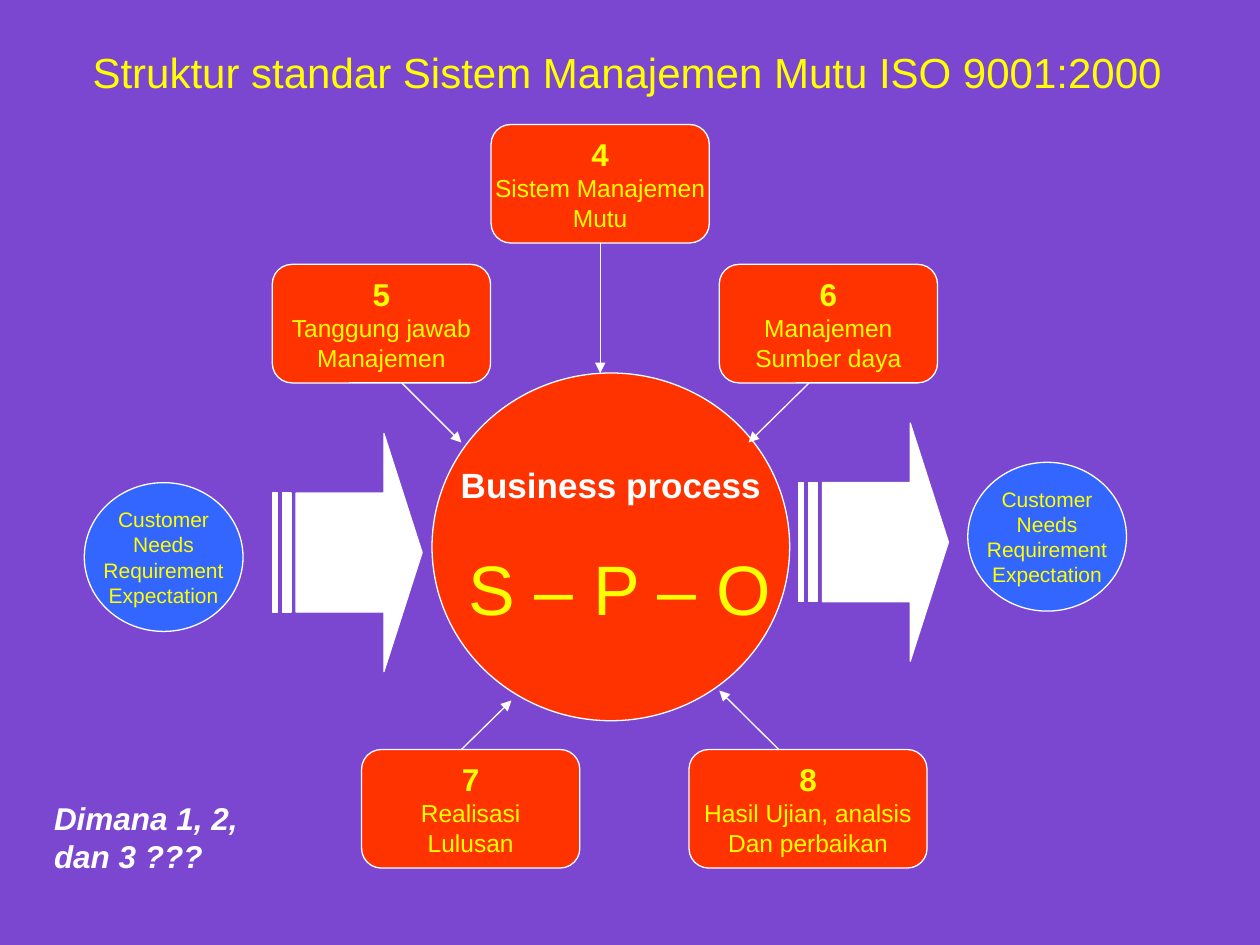
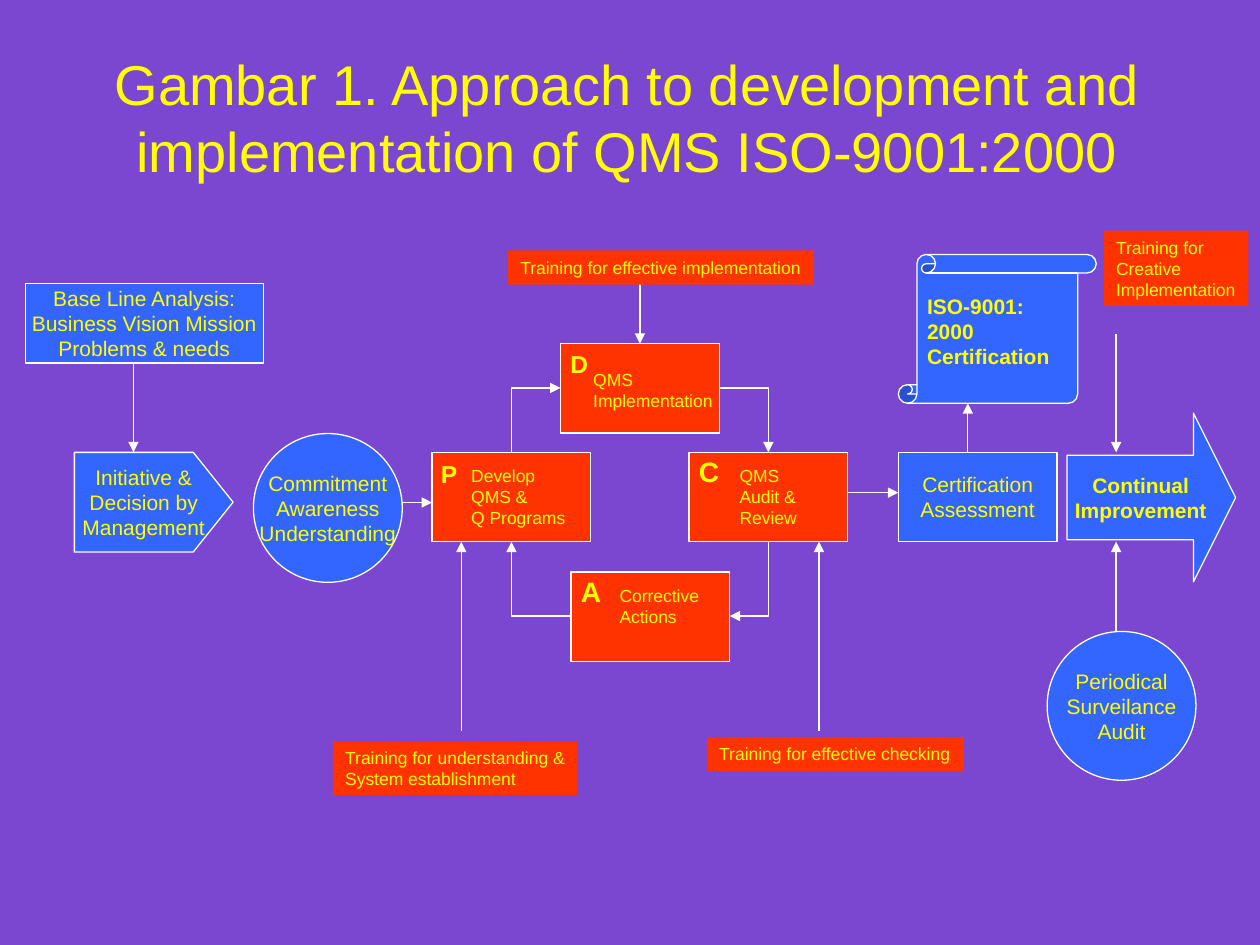
import lxml.etree
import pptx
import pptx.dml.color
import pptx.enum.shapes
import pptx.enum.text
import pptx.oxml.ns
import pptx.util

Cm = pptx.util.Cm
Pt = pptx.util.Pt
qn = pptx.oxml.ns.qn
Kind = pptx.enum.shapes.MSO_SHAPE
Link = pptx.enum.shapes.MSO_CONNECTOR
Align = pptx.enum.text.PP_ALIGN
Mid = pptx.enum.text.MSO_ANCHOR.MIDDLE
Grow = pptx.enum.text.MSO_AUTO_SIZE.SHAPE_TO_FIT_TEXT

PURPLE = pptx.dml.color.RGBColor(0x7B, 0x46, 0xD0)
YELLOW = pptx.dml.color.RGBColor(0xFF, 0xFF, 0x00)
RED = pptx.dml.color.RGBColor(0xFF, 0x33, 0x00)
BLUE = pptx.dml.color.RGBColor(0x33, 0x66, 0xFF)
WHITE = pptx.dml.color.RGBColor(0xFF, 0xFF, 0xFF)

BASE = {"name": "Arial", "size": Pt(12), "bold": False, "italic": False}
BOLD = {"bold": True}
SMALL = {"size": Pt(10)}
HEAD = {"size": Pt(18), "bold": True}
THIN = Pt(0.75)


def style(font, look, color=YELLOW):
    """Apply the base format and its overrides to a font."""
    for key, value in {**BASE, **look}.items():
        setattr(font, key, value)
    font.color.rgb = color


def write(frame, text, look, align=Align.CENTER, color=YELLOW, wrap=False):
    """Fill a text frame, one paragraph a line, and return the paragraphs."""
    frame.word_wrap = wrap
    frame.text = text
    for para in frame.paragraphs:
        para.alignment = align
        style(para.runs[0].font, look, color)
    return frame.paragraphs


def page(deck, title, size, height):
    """Add a purple slide with its title."""
    slide = deck.slides.add_slide(deck.slide_layouts[6])
    slide.background.fill.solid()
    slide.background.fill.fore_color.rgb = PURPLE
    box = slide.shapes.add_textbox(Cm(1.27), Cm(0.76), Cm(22.75), Cm(height))
    box.text_frame.vertical_anchor = Mid
    write(box.text_frame, title, {"size": Pt(size)}, wrap=True)
    return slide.shapes


def paint(shape, fill):
    """Give a shape a flat fill and a thin white outline."""
    shape.shadow.inherit = False
    shape.fill.solid()
    shape.fill.fore_color.rgb = fill
    shape.line.color.rgb = WHITE
    shape.line.width = THIN


def block(shapes, kind, rect, fill, text="", look={}):
    """Add a preset shape with centred text."""
    shape = shapes.add_shape(kind, *map(Cm, rect))
    paint(shape, fill)
    if text:
        shape.text_frame.vertical_anchor = Mid
        write(shape.text_frame, text, look)
    return shape


def clause(shapes, rect, text):
    """Add a rounded box headed by its clause number."""
    box = block(shapes, Kind.ROUNDED_RECTANGLE, rect, RED, text, {"size": Pt(14)})
    style(box.text_frame.paragraphs[0].runs[0].font, HEAD)
    return box


def note(shapes, rect, text, look, color=YELLOW):
    """Add free text, aligned left."""
    box = shapes.add_textbox(*map(Cm, rect))
    write(box.text_frame, text, look, Align.LEFT, color)
    box.text_frame.auto_size = Grow
    return box


def label(shapes, rect, text):
    """Add a small red training label."""
    box = note(shapes, rect, text, SMALL)
    box.fill.solid()
    box.fill.fore_color.rgb = RED


def arrow(shapes, ends, kind=Link.STRAIGHT):
    """Add a thin white connector with an arrowhead at its end."""
    line = shapes.add_connector(kind, *map(Cm, ends))
    line.line.color.rgb = WHITE
    line.line.width = THIN
    props = line._element.spPr
    lxml.etree.SubElement(props.find(qn("a:ln")), qn("a:tailEnd"), type="triangle")
    lxml.etree.SubElement(props, qn("a:effectLst"))
    return line


def bend(shapes, ends, turn):
    """Add an arrow with one corner, turned by quarter circles."""
    x1, y1, x2, y2 = ends
    wide, high = abs(x2 - x1), abs(y2 - y1)
    if turn % 2:
        wide, high = high, wide
    left, top = (x1 + x2 - wide) / 2, (y1 + y2 - high) / 2
    line = arrow(shapes, (left, top, left + wide, top + high), Link.ELBOW)
    props = line._element.spPr
    props.find(qn("a:prstGeom")).set("prst", "bentConnector2")
    props.find(qn("a:xfrm")).set("rot", str(turn * 5400000))


def flow(shapes, left, top):
    """Add a striped block arrow that points right."""
    head = [(2.25, 0), (2.25, 1.2), (0.48, 1.2), (0.48, 3.6),
            (2.25, 3.6), (2.25, 4.8), (3.02, 2.4)]
    bars = [[(a, 1.2), (a, 3.6), (b, 3.6), (b, 1.2)]
            for a, b in ((0.2, 0.38), (0, 0.1))]
    pen = None
    for part in [head] + bars:
        dots = [(Cm(left + x), Cm(top + y)) for x, y in part]
        if pen is None:
            pen = shapes.build_freeform(*dots[0])
        else:
            pen.move_to(*dots[0])
        pen.add_line_segments(dots[1:], close=True)
    paint(pen.convert_to_shape(), WHITE)


def clauses(deck):
    """Build the slide on the structure of the standard."""
    shapes = page(deck, "Struktur standar Sistem Manajemen Mutu ISO 9001:2000", 24, 1.37)
    core = block(shapes, Kind.OVAL, (8.71, 7.52, 7.21, 7.01), RED,
                 "Business process\nS – P – O", {"size": Pt(40)})
    name, steps = core.text_frame.paragraphs
    style(name.runs[0].font, {"size": Pt(20), "bold": True}, WHITE)
    steps.space_before = Pt(23)
    steps._p.get_or_add_pPr().set("marL", str(Cm(0.36)))
    for left, top in ((5.49, 8.74), (16.1, 8.53)):
        flow(shapes, left, top)
    for left, top in ((1.7, 9.73), (19.51, 9.32)):
        block(shapes, Kind.OVAL, (left, top, 3.2, 3), BLUE,
              "Customer\nNeeds\nRequirement\nExpectation")
    first = clause(shapes, (9.9, 2.51, 4.4, 2.39), "4\nSistem Manajemen\nMutu")
    for left, top, wide, text in (
        (14.5, 5.33, 4.4, "6\nManajemen\nSumber daya"),
        (5.49, 5.33, 4.4, "5\nTanggung jawab\nManajemen"),
        (13.89, 15.11, 4.8, "8\nHasil Ujian, analsis\nDan perbaikan"),
        (7.29, 15.11, 4.4, "7\nRealisasi\nLulusan"),
    ):
        clause(shapes, (left, top, wide, 2.39), text)
    arrow(shapes, (12.1, 4.9, 12.1, 7.52)).begin_connect(first, 2)
    for ends in ((8.1, 7.72, 9.3, 8.92), (16.31, 7.72, 15.09, 8.92),
                 (9.3, 15.11, 10.31, 14.12), (15.7, 15.11, 14.5, 13.92)):
        arrow(shapes, ends)
    note(shapes, (0.84, 15.98, 4.22, 1.78), "Dimana 1, 2,\ndan 3 ???",
         {**HEAD, "italic": True}, WHITE)


def cycle(deck):
    """Build the slide on the approach to certification."""
    shapes = page(deck, "Gambar 1. Approach to development and "
                  "implementation of QMS ISO-9001:2000", 32, 3.18)
    block(shapes, Kind.RECTANGLE, (0.51, 5.72, 4.8, 1.6), BLUE,
          "Base Line Analysis:\nBusiness Vision Mission\nProblems & needs")
    plate = block(shapes, Kind.PENTAGON, (1.5, 9.12, 3.2, 2.01), BLUE,
                  "Initiative &\nDecision by\nManagement")
    plate.adjustments[0] = 0.4
    block(shapes, Kind.OVAL, (5.11, 8.74, 3, 3), BLUE,
          "Commitment\nAwareness\nUnderstanding")
    steps = [block(shapes, Kind.RECTANGLE, (left, top, 3.2, 1.8), RED)
             for left, top in ((8.71, 9.12), (11.3, 6.93), (13.89, 9.12), (11.51, 11.53))]
    block(shapes, Kind.RECTANGLE, (18.11, 9.12, 3.2, 1.8), BLUE,
          "Certification\nAssessment")
    goal = block(shapes, Kind.RIGHT_ARROW, (21.51, 8.33, 3.4, 3.4), BLUE,
                 "Continual\nImprovement", BOLD)
    goal.adjustments[1] = 0.25
    block(shapes, Kind.OVAL, (21.11, 12.73, 3, 3), BLUE,
          "Periodical\nSurveilance\nAudit")
    block(shapes, Kind.VERTICAL_SCROLL, (18.11, 5.13, 3.99, 3), BLUE)

    for ends in (
        (2.69, 7.32, 2.69, 9.12), (8.1, 10.13, 8.71, 10.13),
        (17.09, 9.93, 18.11, 9.93), (19.51, 9.12, 19.51, 8.13),
        (22.5, 6.73, 22.5, 9.12), (22.5, 12.73, 22.5, 10.92),
        (9.3, 14.73, 9.3, 10.92), (16.51, 14.73, 16.51, 10.92),
    ):
        arrow(shapes, ends)
    arrow(shapes, (12.9, 5.72, 12.9, 6.93)).end_connect(steps[1], 0)
    for ends, turn in (
        ((10.31, 9.12, 11.3, 7.82), 3), ((14.5, 7.82, 15.49, 9.12), 0),
        ((15.49, 10.92, 14.71, 12.42), 1), ((11.51, 12.42, 10.31, 10.92), 2),
    ):
        bend(shapes, ends, turn)

    for left, top, mark, size in (
        (8.64, 9.12, "P", 14), (11.25, 6.91, "D", 14),
        (13.84, 9.04, "C", 16), (11.46, 11.46, "A", 16),
    ):
        note(shapes, (left, top, 0.9, 0.9), mark, {"size": Pt(size), "bold": True})
    for rect, text in (
        ((9.25, 9.25, 2.41, 1.52), "Develop\nQMS &\nQ Programs"),
        ((11.71, 7.32, 2.92, 1.09), "QMS\nImplementation"),
        ((14.66, 9.25, 1.68, 1.52), "QMS\nAudit &\nReview"),
        ((12.24, 11.66, 2.11, 1.09), "Corrective\nActions"),
    ):
        note(shapes, rect, text, SMALL)
    note(shapes, (18.44, 5.79, 2.97, 1.78), "ISO-9001:\n2000\nCertification", BOLD)
    for rect, text in (
        ((10.24, 5.05, 6.17, 0.69), "Training for effective implementation"),
        ((6.71, 14.94, 4.93, 1.09), "Training for understanding &\nSystem establishment"),
        ((14.25, 14.86, 5.18, 0.69), "Training for effective checking"),
        ((22.25, 4.65, 2.92, 1.52), "Training for\nCreative\nImplementation"),
    ):
        label(shapes, rect, text)


def main():
    """Build and save the deck."""
    deck = pptx.Presentation()
    deck.slide_width, deck.slide_height = Cm(25.4), Cm(19.05)
    clauses(deck)
    cycle(deck)
    deck.save("out.pptx")


if __name__ == "__main__":
    main()
